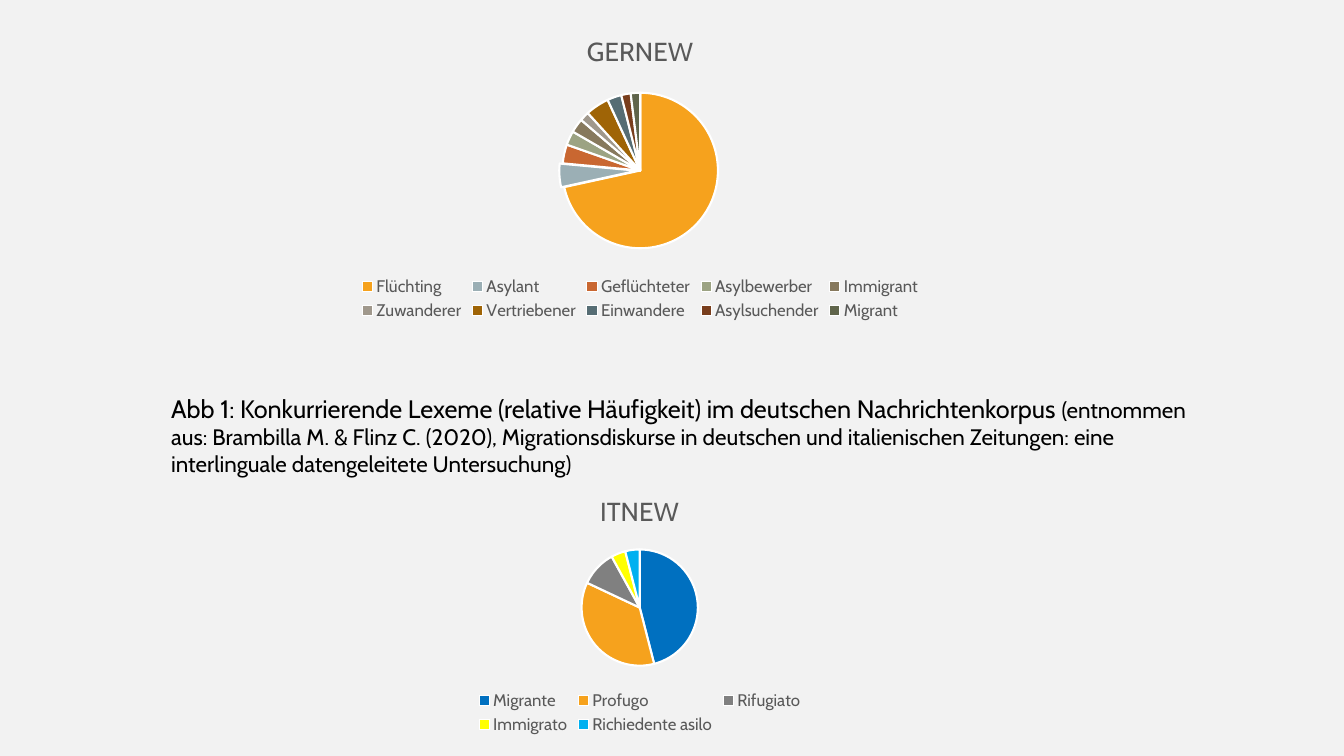
import pptx
import pptx.util
import pptx.chart.data
import pptx.enum.chart
import pptx.enum.text
import pptx.dml.color
import pptx.oxml
import pptx.oxml.ns

FONT = "Cabin"
COLORS = {"back": "F2F2F2", "text": "000000", "label": "595959", "edge": "FFFFFF"}
PIES = [
    {
        "title": "GERNEW",
        "box": (3.01, 0.17, 6.68, 3.05),
        "parts": [
            ("Flüchting", 73, "F6A21D"),
            ("Asylant", 5, "9BAFB5"),
            ("Geflüchteter", 4, "C96731"),
            ("Asylbewerber", 3, "9CA383"),
            ("Immigrant", 3, "87795D"),
            ("Zuwanderer", 2, "A0988C"),
            ("Vertriebener", 5, "9F6406"),
            ("Einwandere", 3, "566D74"),
            ("Asylsuchender", 2, "793E1D"),
            ("Migrant", 2, "60654B"),
        ],
        "burst": {"Asylant": 4},
    },
    {
        "title": "ITNEW",
        "box": (3.45, 4.74, 5.79, 2.59),
        "parts": [
            ("Migrante", 46, "0070C0"),
            ("Profugo", 36, "F6A21D"),
            ("Rifugiato", 10, "808080"),
            ("Immigrato", 4, "FFFF00"),
            ("Richiedente asilo", 4, "00B0F0"),
        ],
        "burst": {},
    },
]
NOTE_BOX = (1.6, 3.85, 10.6, 0.94)
NOTE = [
    ("Abb 1: Konkurrierende Lexeme (relative Häufigkeit) im deutschen Nachrichtenkorpus ", 18),
    ("(entnommen aus: Brambilla M. & Flinz C. (2020), Migrationsdiskurse in deutschen und "
     "italienischen Zeitungen: eine interlinguale datengeleitete Untersuchung)", 16),
]


def rgb(code):
    return pptx.dml.color.RGBColor.from_string(code)


def place(box):
    return [pptx.util.Inches(n) for n in box]


def style(font, size, color):
    font.name = FONT
    font.size = pptx.util.Pt(size)
    font.bold = False
    font.color.rgb = rgb(COLORS[color])


def add_pie(slide, pie):
    data = pptx.chart.data.CategoryChartData()
    data.categories = [name for name, _, _ in pie["parts"]]
    data.add_series(pie["title"], [value for _, value, _ in pie["parts"]])
    kind = pptx.enum.chart.XL_CHART_TYPE.PIE
    chart = slide.shapes.add_chart(kind, *place(pie["box"]), data).chart
    style(chart.font, 10, "text")

    chart.has_title = True
    run = chart.chart_title.text_frame.paragraphs[0].add_run()
    run.text = pie["title"]
    style(run.font, 18.6, "label")
    chart.chart_title.include_in_layout = False

    chart.has_legend = True
    chart.legend.position = pptx.enum.chart.XL_LEGEND_POSITION.BOTTOM
    chart.legend.include_in_layout = False
    style(chart.legend.font, 12, "label")

    plot = chart.plots[0]
    plot.vary_by_categories = True
    series = plot.series[0]
    for i, (name, _, color) in enumerate(pie["parts"]):
        form = series.points[i].format
        form.fill.solid()
        form.fill.fore_color.rgb = rgb(color)
        form.line.color.rgb = rgb(COLORS["edge"])
        form.line.width = pptx.util.Pt(1.5)
        if name in pie["burst"]:
            space = pptx.oxml.ns.nsdecls("c")
            push = pptx.oxml.parse_xml(f'<c:explosion {space} val="{pie["burst"][name]}"/>')
            point = series._element.xpath(f"c:dPt[c:idx/@val='{i}']")[0]
            point.find(pptx.oxml.ns.qn("c:spPr")).addprevious(push)


def add_note(slide):
    frame = slide.shapes.add_textbox(*place(NOTE_BOX)).text_frame
    frame.word_wrap = True
    frame.auto_size = pptx.enum.text.MSO_AUTO_SIZE.SHAPE_TO_FIT_TEXT
    para = frame.paragraphs[0]
    for text, size in NOTE:
        run = para.add_run()
        run.text = text
        style(run.font, size, "text")


def main():
    deck = pptx.Presentation()
    deck.slide_width = pptx.util.Inches(13.33)
    deck.slide_height = pptx.util.Inches(7.5)
    slide = deck.slides.add_slide(deck.slide_layouts[6])
    slide.background.fill.solid()
    slide.background.fill.fore_color.rgb = rgb(COLORS["back"])
    for pie in PIES:
        add_pie(slide, pie)
    add_note(slide)
    deck.save("out.pptx")


if __name__ == "__main__":
    main()
